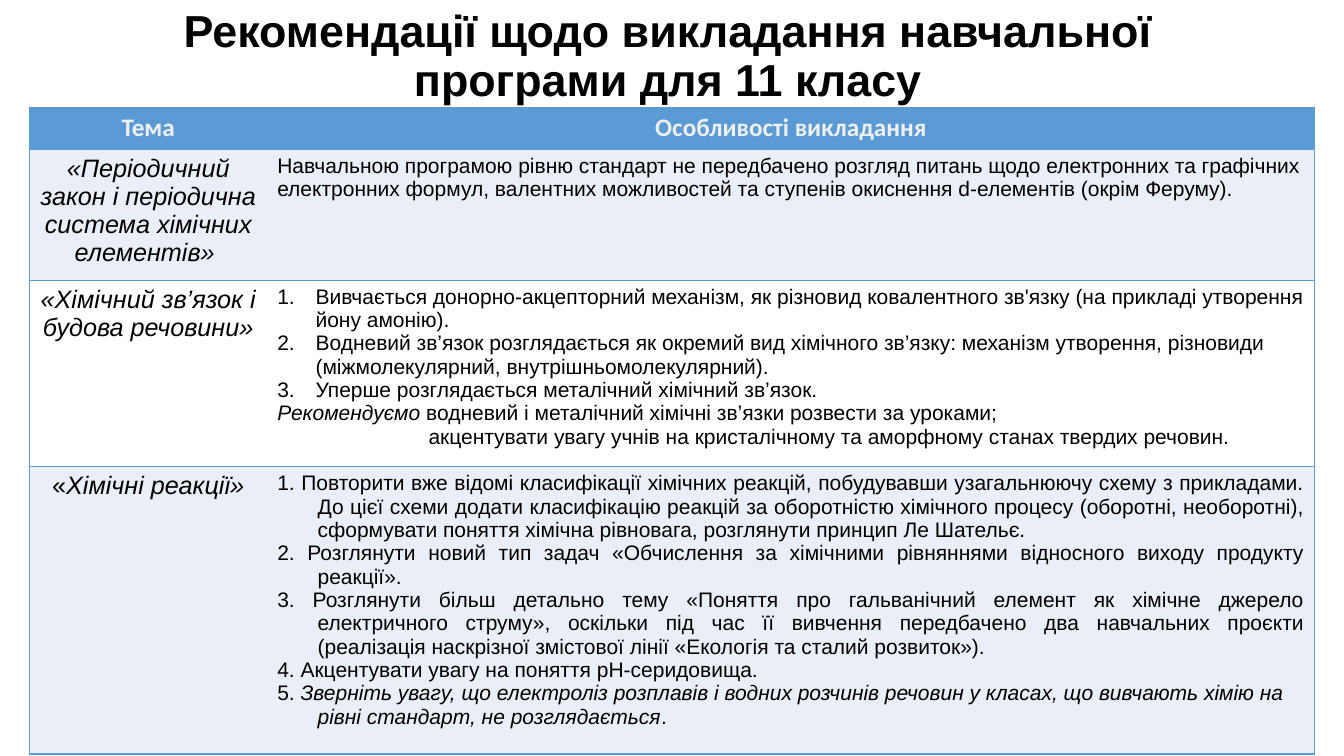
"""Build the slide with teaching recommendations for the 11th-grade programme."""
from dataclasses import dataclass
from typing import Optional

from lxml.etree import SubElement
from pptx import Presentation
from pptx.dml.color import RGBColor
from pptx.enum.text import MSO_ANCHOR, PP_ALIGN
from pptx.oxml.ns import qn
from pptx.util import Inches, Pt

COLORS = {"background": "FFFFFF", "header": "EFEFEF", "accent": "5B9BD5",
          "band": "EAEFF7", "text": "000000"}


@dataclass(frozen=True)
class Span:
    text: str
    italic: bool = False


@dataclass(frozen=True)
class Line:
    spans: tuple[Span, ...]
    align: PP_ALIGN = PP_ALIGN.LEFT
    left: float = 0
    hanging: float = 0
    numbered: bool = False
    spacing: Optional[float] = None


@dataclass(frozen=True)
class Style:
    size: float
    name: str = "Arial"
    color: str = "text"
    bold: bool = False


@dataclass(frozen=True)
class Row:
    fill: str
    topic: Line
    details: tuple[Line, ...]


TITLE_STYLE = Style(32, bold=True)
HEADER_STYLE = Style(18, "Calibri", "header", True)
TOPIC_STYLE = Style(18)
DETAIL_STYLE = Style(15)
COLUMN_WIDTHS = (2.36, 10.39)
ROW_HEIGHT = 0.41
TABLE_HEIGHT = 6.41


def centered(*spans: Span) -> Line:
    return Line(spans, PP_ALIGN.CENTER)


def numbered(text: str) -> Line:
    return Line((Span(text),), left=0.38, hanging=0.38, numbered=True)


def hanging(*spans: Span, align: PP_ALIGN = PP_ALIGN.LEFT) -> Line:
    return Line(spans, align, 0.4, 0.4)


TITLE = Line((Span("Рекомендації щодо викладання навчальної програми для 11 класу"),),
             PP_ALIGN.CENTER, spacing=0.9)

ROWS = (
    Row("accent", centered(Span("Тема")), (centered(Span("Особливості викладання")),)),
    Row("band",
        centered(Span("«Періодичний закон і періодична система хімічних елементів» ", True)),
        (Line((Span("Навчальною програмою рівню стандарт не передбачено розгляд питань щодо "
                    "електронних та графічних електронних формул, валентних можливостей та "
                    "ступенів окиснення d-елементів (окрім Феруму)."),)),)),
    Row("background",
        centered(Span("«Хімічний зв’язок і будова речовини»", True)),
        (numbered("Вивчається донорно-акцепторний механізм, як різновид ковалентного зв'язку "
                  "(на прикладі утворення йону амонію)."),
         numbered("Водневий зв’язок розглядається як окремий вид хімічного зв’язку: механізм "
                  "утворення, різновиди (міжмолекулярний, внутрішньомолекулярний)."),
         numbered("Уперше розглядається металічний хімічний зв’язок."),
         Line((Span("Рекомендуємо", True),
               Span(" водневий і металічний хімічні зв’язки розвести за уроками;"))),
         Line((Span("акцентувати увагу учнів на кристалічному та аморфному станах твердих "
                    "речовин."),), left=1.5))),
    Row("band",
        centered(Span("«"), Span("Хімічні реакції»", True)),
        (hanging(Span("1. Повторити вже відомі класифікації хімічних реакцій, побудувавши "
                      "узагальнюючу схему з прикладами. До цієї схеми додати класифікацію "
                      "реакцій за оборотністю хімічного процесу (оборотні, необоротні), "
                      "сформувати поняття хімічна рівновага, розглянути принцип Ле Шательє. "),
                 align=PP_ALIGN.JUSTIFY),
         hanging(Span("2. Розглянути новий тип задач «Обчислення за хімічними рівняннями "
                      "відносного виходу продукту реакції»."), align=PP_ALIGN.JUSTIFY),
         hanging(Span("3. Розглянути більш детально тему «Поняття про гальванічний елемент як "
                      "хімічне джерело електричного струму», оскільки під час її вивчення "
                      "передбачено два навчальних проєкти (реалізація наскрізної змістової "
                      "лінії «Екологія та сталий розвиток»)."), align=PP_ALIGN.JUSTIFY),
         hanging(Span("4. Акцентувати увагу на поняття рН-серидовища.")),
         hanging(Span("5."),
                 Span(" Зверніть увагу, що електроліз розплавів і водних розчинів речовин у "
                      "класах, що вивчають хімію на рівні стандарт, не розглядається", True),
                 Span(".")))),
)


def rgb(name: str) -> RGBColor:
    return RGBColor.from_string(COLORS[name])


def write_lines(frame, lines: tuple[Line, ...], style: Style) -> None:
    for index, line in enumerate(lines):
        paragraph = frame.add_paragraph() if index else frame.paragraphs[0]
        for key, value in {"alignment": line.align, "line_spacing": line.spacing}.items():
            setattr(paragraph, key, value)
        properties = paragraph._p.get_or_add_pPr()
        if line.left:
            properties.set("marL", str(Inches(line.left)))
            properties.set("indent", str(Inches(-line.hanging)))
        if line.numbered:
            SubElement(properties, qn("a:buAutoNum"), type="arabicPeriod")
        for span in line.spans:
            run = paragraph.add_run()
            run.text = span.text.replace("(реалізація ", "(реалізація\N{NO-BREAK SPACE}")
            formats = {"name": style.name, "size": Pt(style.size),
                       "bold": style.bold, "italic": span.italic}
            for key, value in formats.items():
                setattr(run.font, key, value)
            run.font.color.rgb = rgb(style.color)


def add_borders(cell, visible: str) -> None:
    properties = cell._tc.get_or_add_tcPr()
    for side in "LRTB":
        border = SubElement(properties, qn(f"a:ln{side}"), w=str(Pt(1)))
        if side in visible:
            fill = SubElement(border, qn("a:solidFill"))
            SubElement(fill, qn("a:srgbClr"), val=COLORS["accent"])
        else:
            SubElement(border, qn("a:noFill"))


def add_title(page) -> None:
    box = page.shapes.add_textbox(Inches(0.6), Inches(0.21), Inches(12.05), Inches(0.72))
    frame = box.text_frame
    formats = {"word_wrap": True, "vertical_anchor": MSO_ANCHOR.MIDDLE,
               "margin_left": Inches(0.2), "margin_right": Inches(0.2)}
    for key, value in formats.items():
        setattr(frame, key, value)
    write_lines(frame, (TITLE,), TITLE_STYLE)


def add_recommendations(page) -> None:
    holder = page.shapes.add_table(
        len(ROWS), len(COLUMN_WIDTHS), Inches(0.29), Inches(1.07),
        Inches(sum(COLUMN_WIDTHS)), Inches(TABLE_HEIGHT))
    table = holder.table
    for column, width in zip(table.columns, COLUMN_WIDTHS):
        column.width = Inches(width)
    for index, row in enumerate(ROWS):
        table.rows[index].height = Inches(ROW_HEIGHT)
        styles = (TOPIC_STYLE, DETAIL_STYLE) if index else (HEADER_STYLE, HEADER_STYLE)
        contents = ((row.topic,), row.details)
        for cell, lines, style, sides in zip(
                table.rows[index].cells, contents, styles, ("LTB", "RTB")):
            add_borders(cell, sides)
            cell.fill.solid()
            cell.fill.fore_color.rgb = rgb(row.fill)
            write_lines(cell.text_frame, lines, style)
    holder.height = Inches(TABLE_HEIGHT)


def main() -> None:
    deck = Presentation()
    for key, value in {"slide_width": Inches(13.33), "slide_height": Inches(7.5)}.items():
        setattr(deck, key, value)
    page = deck.slides.add_slide(deck.slide_layouts[6])
    page.background.fill.solid()
    page.background.fill.fore_color.rgb = rgb("background")
    add_title(page)
    add_recommendations(page)
    deck.save("out.pptx")


if __name__ == "__main__":
    main()
